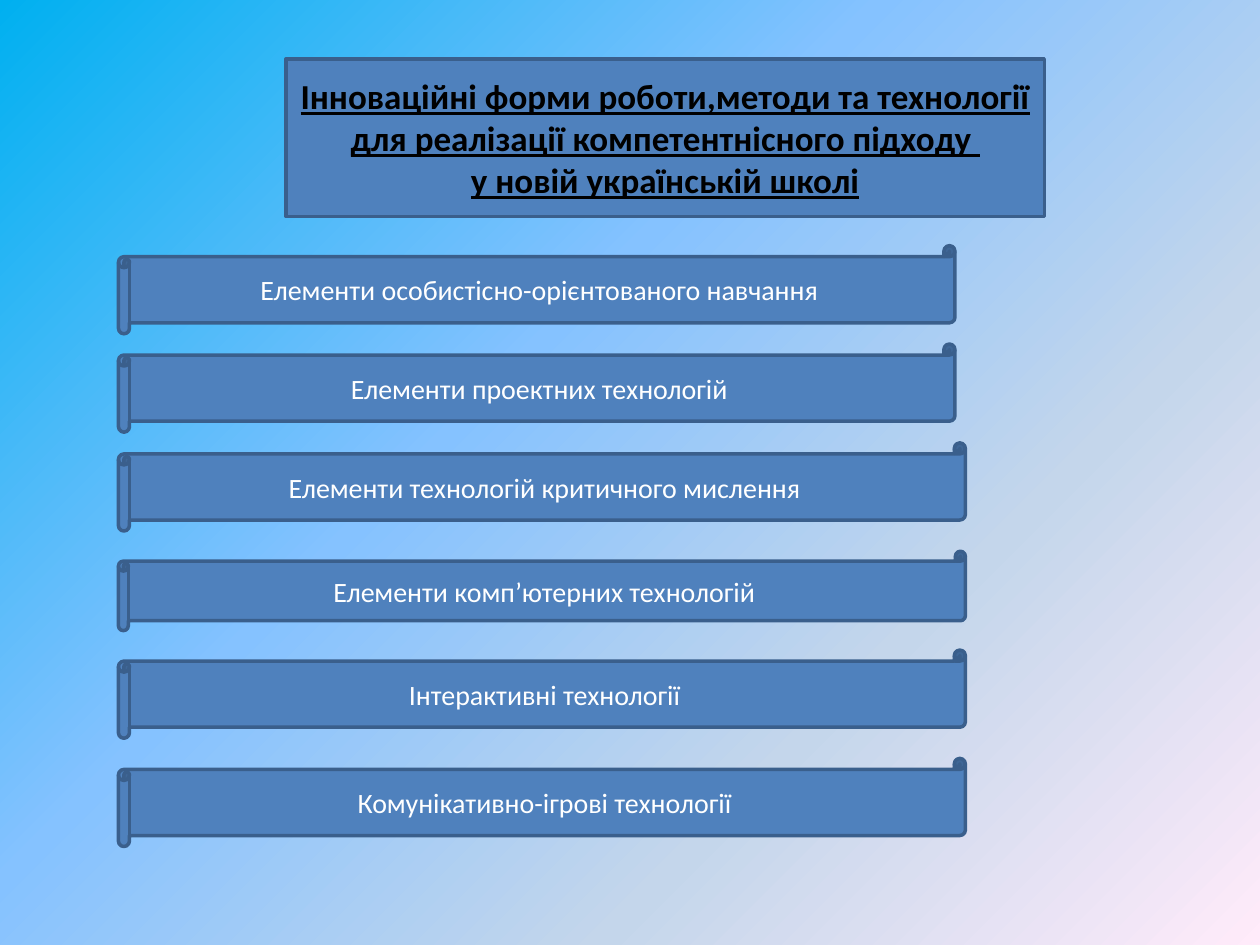
from lxml import etree
from pptx import Presentation
from pptx import util as u
from pptx.dml import color
from pptx.enum import shapes, text
from pptx.oxml import ns

TITLE = [
    "Інноваційні форми роботи,методи та технології ",
    "для реалізації компетентнісного підходу ",
    "у новій українській школі",
]
SCROLLS = [
    ("Елементи особистісно-орієнтованого навчання", 140.4, 478, 50.4),
    ("Елементи проектних технологій", 196.6, 478, 50.4),
    ("Елементи технологій критичного мислення", 253.1, 484, 50.4),
    ("Елементи комп’ютерних технологій", 315, 484, 45.4),
    ("Інтерактивні технології", 371.5, 484, 50.4),
    ("Комунікативно-ігрові технології", 433.4, 484, 50.4),
]
STOPS = [(0, "00B0F0"), (40, "85C2FF"), (70, "C4D6EB"), (100, "FFEBFA")]
HEAD = {"size": u.Pt(20), "bold": True, "underline": True}
ITEM = {"size": u.Pt(16)}


def rgb(code):
    """Turn a hex string into a colour."""
    return color.RGBColor.from_string(code)


def shade(slide):
    """Fill the background with the diagonal gradient."""
    fill = slide.background.fill
    fill.gradient()
    fill.gradient_angle = 315
    stops = slide.element.find(".//" + ns.qn("a:gsLst"))
    for old in list(stops):
        stops.remove(old)
    for pos, code in STOPS:
        stop = etree.SubElement(stops, ns.qn("a:gs"), pos=str(pos * 1000))
        etree.SubElement(stop, ns.qn("a:srgbClr"), val=code)


def panel(slide, kind, box, lines, ink, style):
    """Add a blue outlined shape with centred lines of text."""
    shape = slide.shapes.add_shape(kind, *map(u.Pt, box))
    shape.shadow.inherit = False
    shape.fill.solid()
    shape.fill.fore_color.rgb = rgb("4F81BD")
    shape.line.color.rgb = rgb("3A5F8C")
    shape.line.width = u.Pt(2)
    frame = shape.text_frame
    frame.word_wrap = True
    frame.vertical_anchor = text.MSO_ANCHOR.MIDDLE
    for num, line in enumerate(lines):
        para = frame.add_paragraph() if num else frame.paragraphs[0]
        para.alignment = text.PP_ALIGN.CENTER
        run = para.add_run()
        run.text = line
        run.font.color.rgb = rgb(ink)
        for key, val in {"name": "Calibri", **style}.items():
            setattr(run.font, key, val)


def main():
    """Build the slide and save it."""
    deck = Presentation()
    deck.slide_width, deck.slide_height = u.Pt(720), u.Pt(540)
    slide = deck.slides.add_slide(deck.slide_layouts[6])
    shade(slide)
    kinds = shapes.MSO_SHAPE
    panel(slide, kinds.RECTANGLE, (163.4, 33.8, 433.4, 90), TITLE, "000000", HEAD)
    for label, top, width, height in SCROLLS:
        box = (67.7, top, width, height)
        panel(slide, kinds.HORIZONTAL_SCROLL, box, [label], "FFFFFF", ITEM)
    deck.save("out.pptx")


if __name__ == "__main__":
    main()
